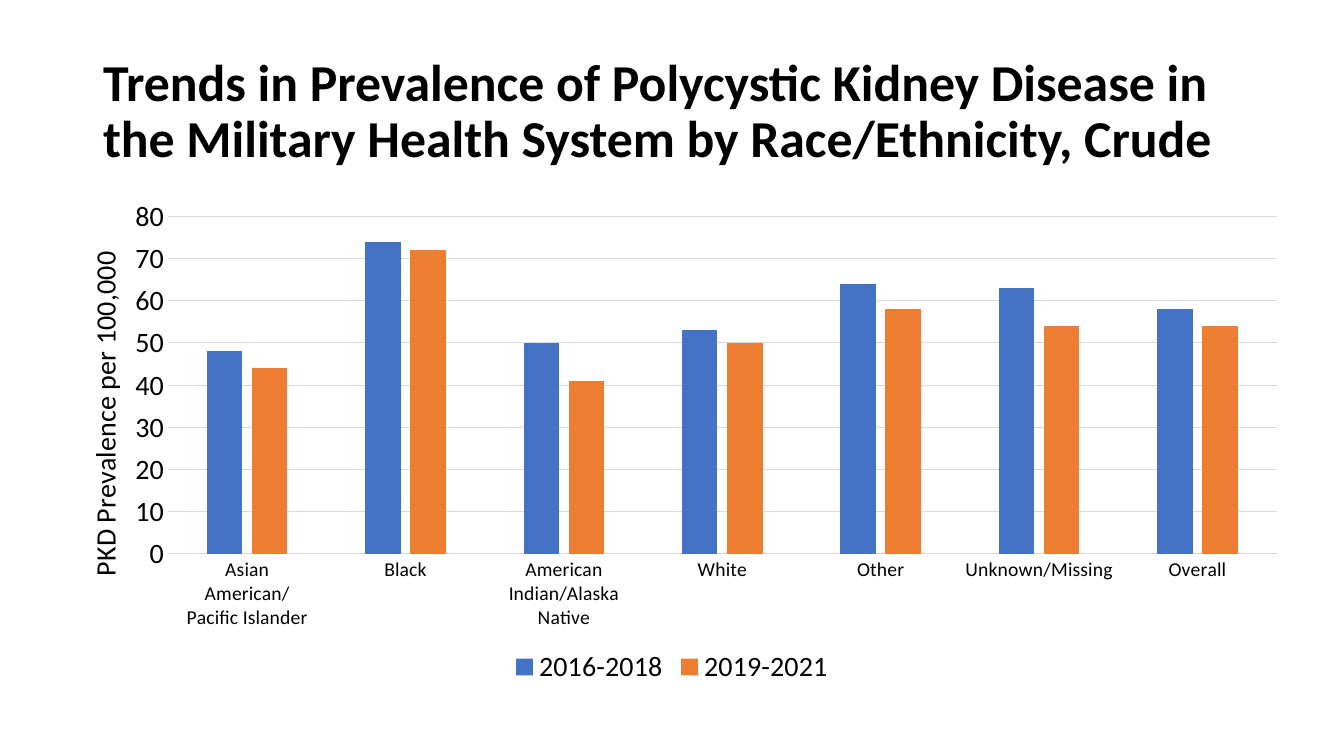
from lxml import etree
from pptx import Presentation
from pptx.chart.data import CategoryChartData
from pptx.dml.color import RGBColor
from pptx.enum.chart import XL_CHART_TYPE, XL_LEGEND_POSITION, XL_TICK_MARK
from pptx.enum.text import MSO_ANCHOR, MSO_AUTO_SIZE, PP_ALIGN
from pptx.oxml.ns import qn
from pptx.util import Pt

CLUSTERED = XL_CHART_TYPE.COLUMN_CLUSTERED
BOTTOM = XL_LEGEND_POSITION.BOTTOM
NO_TICK = XL_TICK_MARK.NONE
MIDDLE = MSO_ANCHOR.MIDDLE
NO_AUTOFIT = MSO_AUTO_SIZE.NONE
LEFT = PP_ALIGN.LEFT

EMU_PER_PX = 914400 / 100.8
FONT = "Calibri"
COLORS = {"text": "000000", "grid": "D9D9D9", "background": "FFFFFF",
          "2016-2018": "4472C4", "2019-2021": "ED7D31"}

HEADING = ("Trends in Prevalence of Polycystic Kidney Disease in "
           "the Military Health System by Race/Ethnicity, Crude")
PREVALENCE = {
    "Asian American/Pacific Islander": (48, 44),
    "Black": (74, 72),
    "American Indian/Alaska Native": (50, 41),
    "White": (53, 50),
    "Other": (64, 58),
    "Unknown/Missing": (63, 54),
    "Overall": (58, 54),
}
PERIODS = ("2016-2018", "2019-2021")


def px(length):
    return round(length * EMU_PER_PX)


def color(name):
    return RGBColor.from_string(COLORS[name])


def style_font(font, size, bold=False):
    font.name = FONT
    font.size = Pt(size)
    font.bold = bold
    font.color.rgb = color("text")


def style_line(line):
    line.color.rgb = color("grid")
    line.width = Pt(0.75)


def set_layout(parent, index, **fractions):
    """Fix a chart part's place, as fractions of the chart's box."""
    layout = parent.find(qn("c:layout"))
    if layout is None:
        layout = etree.Element(qn("c:layout"))
        parent.insert(index, layout)
    manual = etree.SubElement(layout, qn("c:manualLayout"))
    if "w" in fractions:
        etree.SubElement(manual, qn("c:layoutTarget")).set("val", "inner")
    for mode in ("xMode", "yMode"):
        etree.SubElement(manual, qn(f"c:{mode}")).set("val", "edge")
    for side, fraction in fractions.items():
        etree.SubElement(manual, qn(f"c:{side}")).set("val", str(fraction))


def add_heading(slide, left, top, width, height):
    heading = slide.shapes.title
    heading.left, heading.top = px(left), px(top)
    heading.width, heading.height = px(width), px(height)
    frame = heading.text_frame
    frame.text = HEADING
    frame.word_wrap = True
    frame.auto_size = NO_AUTOFIT
    frame.vertical_anchor = MIDDLE
    paragraph = frame.paragraphs[0]
    paragraph.alignment = LEFT
    paragraph.line_spacing = 0.9
    style_font(paragraph.font, 37, bold=True)


def add_prevalence_chart(slide, left, top, width, height):
    data = CategoryChartData()
    data.categories = list(PREVALENCE)
    for period, values in zip(PERIODS, zip(*PREVALENCE.values())):
        data.add_series(period, values)
    chart = slide.shapes.add_chart(
        CLUSTERED, px(left), px(top), px(width), px(height), data).chart
    chart.has_title = False
    style_font(chart.font, 20)

    # Columns
    plot = chart.plots[0]
    plot.gap_width = 219
    plot.overlap = -27
    plot.vary_by_categories = False
    for series in plot.series:
        series.format.fill.solid()
        series.format.fill.fore_color.rgb = color(series.name)
    plot_area = chart.element.find(f".//{qn('c:plotArea')}")
    set_layout(plot_area, 0, x=0.1, y=0.06, w=0.88, h=0.67)

    # Race and ethnicity axis
    groups = chart.category_axis
    groups.major_tick_mark = groups.minor_tick_mark = NO_TICK
    style_font(groups.tick_labels.font, 14)
    style_line(groups.format.line)

    # Prevalence axis
    prevalence = chart.value_axis
    prevalence.minimum_scale, prevalence.maximum_scale = 0, 80
    prevalence.major_unit = 10
    prevalence.major_tick_mark = prevalence.minor_tick_mark = NO_TICK
    prevalence.has_major_gridlines = True
    style_line(prevalence.major_gridlines.format.line)
    prevalence.format.line.fill.background()
    style_font(prevalence.tick_labels.font, 20)

    # Prevalence axis title, reading upwards
    caption = prevalence.axis_title.text_frame
    caption.text = "PKD Prevalence per 100,000"
    style_font(caption.paragraphs[0].font, 20)
    axis_title = plot_area.find(f".//{qn('c:title')}")
    body = axis_title.find(f".//{qn('a:bodyPr')}")
    body.set("rot", "-5400000")
    body.set("vert", "horz")
    set_layout(axis_title, 1, x=0.03, y=0.12)

    # Legend
    chart.has_legend = True
    chart.legend.position = BOTTOM
    chart.legend.include_in_layout = False
    style_font(chart.legend.font, 20)


def main():
    presentation = Presentation()
    presentation.slide_width, presentation.slide_height = px(1344), px(756)
    slide = presentation.slides.add_slide(presentation.slide_layouts[5])
    slide.background.fill.solid()
    slide.background.fill.fore_color.rgb = color("background")
    add_heading(slide, 93, 40, 1159, 146)
    add_prevalence_chart(slide, 42, 186, 1260, 504)
    presentation.save("out.pptx")


if __name__ == "__main__":
    main()
